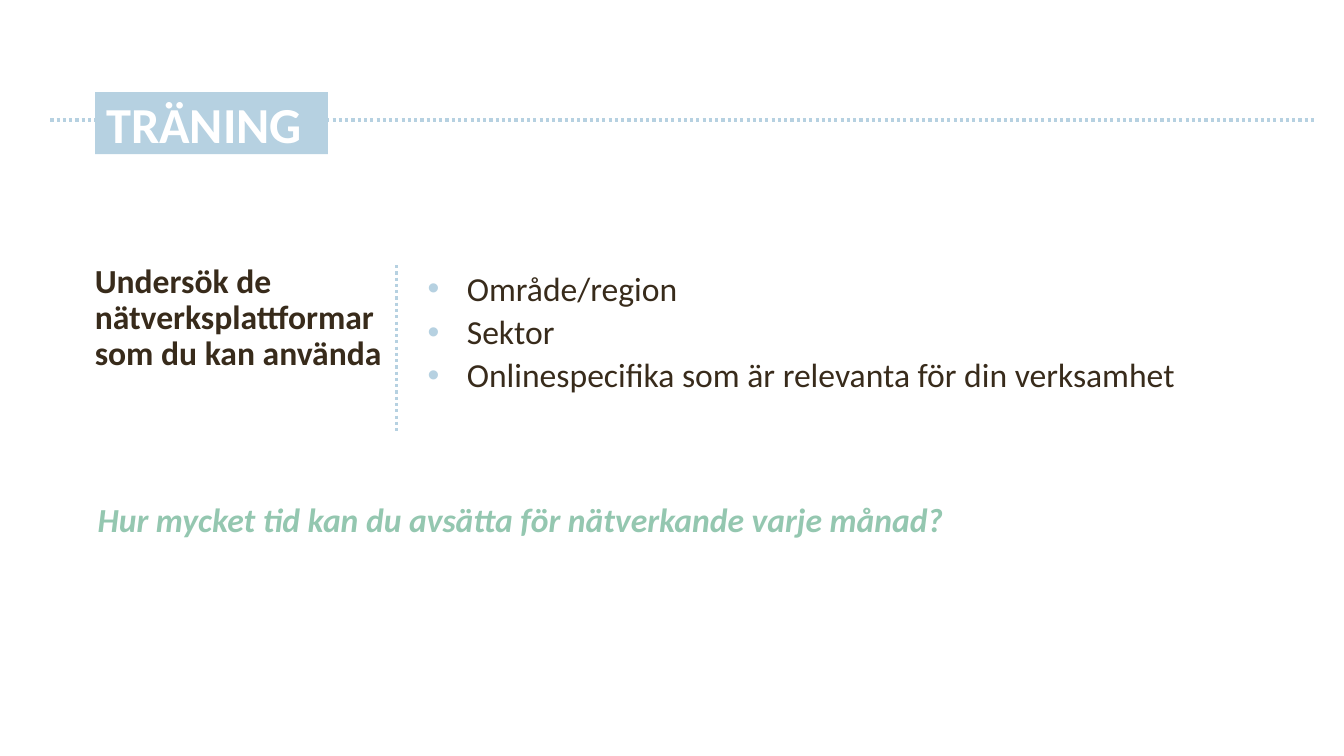
from lxml.etree import SubElement
from pptx import Presentation
from pptx.dml.color import RGBColor
from pptx.enum.dml import MSO_LINE
from pptx.enum.text import MSO_ANCHOR, MSO_AUTO_SIZE, PP_ALIGN
from pptx.oxml.ns import qn
from pptx.util import Inches, Pt

SKY, BROWN, MINT, WHITE = "B6D1E1", "382B1B", "94C7B0", "FFFFFF"

deck = Presentation()
deck.slide_width, deck.slide_height = Inches(13.33), Inches(7.5)
slide = deck.slides.add_slide(deck.slide_layouts[3])
heading, prompt, topics = slide.placeholders


def share(x, y):
    return int(deck.slide_width * x / 100), int(deck.slide_height * y / 100)


def write(holder, area, lines, size, color, bold=False, italic=False, bullet=False):
    holder.left, holder.top = share(*area[:2])
    holder.width, holder.height = share(*area[2:])
    frame = holder.text_frame
    frame.word_wrap = True
    frame.auto_size = MSO_AUTO_SIZE.NONE
    frame.vertical_anchor = MSO_ANCHOR.TOP
    frame.text = "\n".join(lines)
    for number, paragraph in enumerate(frame.paragraphs):
        props = paragraph._p.get_or_add_pPr()
        indent = Inches(0.39) if bullet else 0
        props.set("marL", str(indent))
        props.set("indent", str(-indent))
        if bullet:
            SubElement(SubElement(props, qn("a:buClr")), qn("a:srgbClr"), val=SKY)
            SubElement(props, qn("a:buChar"), char="•")
        else:
            SubElement(props, qn("a:buNone"))
        paragraph.alignment = PP_ALIGN.LEFT
        paragraph.line_spacing = 0.9
        paragraph.space_before = Pt(5 if number else 0)
        for run in paragraph.runs:
            run.font.name, run.font.size = "Calibri", Pt(size)
            run.font.bold, run.font.italic = bold, italic
            run.font.color.rgb = RGBColor.from_string(color)


write(heading, (7.07, 12.2, 17.33, 8.2), ["TRÄNING"], 36, WHITE, bold=True)
heading.fill.solid()
heading.fill.fore_color.rgb = RGBColor.from_string(SKY)
label = heading.text_frame
label.vertical_anchor = MSO_ANCHOR.MIDDLE
label.margin_left = Inches(0.11)
label.margin_top = label.margin_right = label.margin_bottom = 0
label.paragraphs[0].line_spacing = 1.0

write(prompt, (6.3, 34.27, 23.7, 38.4),
      ["Undersök de nätverksplattformar som du kan använda"], 24, BROWN, bold=True)
write(topics, (31.06, 35.33, 62.42, 38.4),
      ["Område/region", "Sektor", "Onlinespecifika som är relevanta för din verksamhet"],
      24, BROWN, bullet=True)

question = slide.shapes.add_textbox(0, 0, 0, 0)
write(question, (6.53, 66, 66.6, 14.27),
      ["Hur mycket tid kan du avsätta för nätverkande varje månad?"],
      24, MINT, bold=True, italic=True)

for start, end in (((3.75, 15.87), (97.75, 15.87)), ((29.48, 35.07), (29.48, 57.07))):
    rule = slide.shapes.add_connector(1, *share(*start), *share(*end))
    rule.line.color.rgb = RGBColor.from_string(SKY)
    rule.line.width = Pt(2.25)
    rule.line.dash_style = MSO_LINE.ROUND_DOT
    SubElement(rule._element.spPr, qn("a:effectLst"))
    heading._element.addprevious(rule._element)

deck.save("out.pptx")
